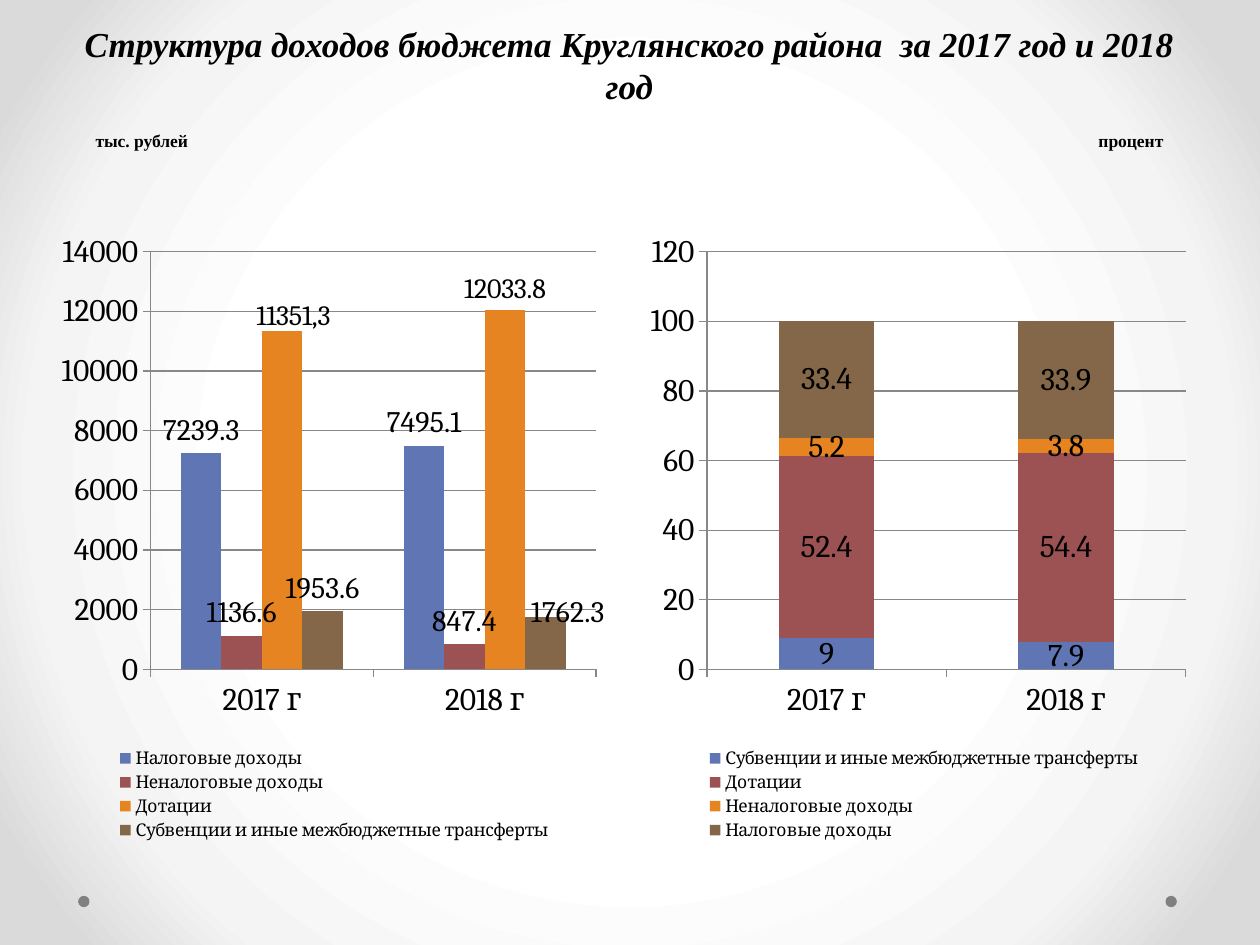
from lxml import etree
from pptx import Presentation
from pptx.chart.data import CategoryChartData
from pptx.dml.color import RGBColor
from pptx.enum.chart import XL_CHART_TYPE as ChartType, XL_LABEL_POSITION as LabelPos
from pptx.enum.chart import XL_LEGEND_POSITION as LegendPos, XL_TICK_MARK as Tick
from pptx.enum.shapes import MSO_SHAPE as Shape
from pptx.enum.text import MSO_ANCHOR as Anchor, PP_ALIGN as Align
from pptx.oxml import parse_xml
from pptx.oxml.ns import nsdecls, qn
from pptx.util import Inches, Pt

COLORS = {"text": "000000", "dot": "808080", "axis": "888888"}
SERIES_COLORS = ["6076B4", "9C5252", "E68422", "846648"]
BACKDROP = [(50, "FFFFFF"), (76, "F4F4F4"), (92, "DADADA")]
YEARS = ["2017 г", "2018 г"]
TAX, NON_TAX = "Налоговые доходы", "Неналоговые доходы"
GRANTS, SUBVENTIONS = "Дотации", "Субвенции и иные межбюджетные трансферты"

CAPTIONS = [
    ("Структура доходов бюджета Круглянского района  за 2017 год и 2018 год",
     (0.43, 0.13, 9.13, 0.77), 20, True, Align.CENTER),
    ("тыс. рублей", (0.59, 0.98, 1.07, 0.27), 10, False, Align.CENTER),
    ("процент", (8.62, 0.98, 0.94, 0.27), 10, False, Align.LEFT),
]
CHARTS = [
    {"kind": ChartType.COLUMN_STACKED, "left": 5.08, "plot": (0.12, 0.05, 0.86, 0.67),
     "max": 120, "step": 20, "overlap": 100, "label_pos": LabelPos.CENTER,
     "series": [(SUBVENTIONS, (9, 7.9), 18), (GRANTS, (52.4, 54.4), 18),
                (NON_TAX, (5.2, 3.8), 18), (TAX, (33.4, 33.9), 18)],
     "moved": []},
    {"kind": ChartType.COLUMN_CLUSTERED, "left": 0.4, "plot": (0.18, 0.05, 0.8, 0.67),
     "max": 14000, "step": 2000, "overlap": 0, "label_pos": LabelPos.OUTSIDE_END,
     "series": [(TAX, (7239.3, 7495.1), 17), (NON_TAX, (1136.6, 847.4), 17),
                (GRANTS, (11351.3, 12033.8), 16), (SUBVENTIONS, (1953.6, 1762.3), 17)],
     "moved": [(2, 0, "11351,3", (0.02, 0.01)), (3, 1, None, (0.04, 0.03))]},
]
LEGEND_AREA = (0.11, 0.84, 0.8, 0.16)


def rgb(value):
    return RGBColor.from_string(value)


def style(font, size, name="Cambria"):
    font.size, font.name = Pt(size), name
    font.color.rgb = rgb(COLORS["text"])


def layout(area, inner=False):
    target = '<c:layoutTarget val="inner"/>' if inner else ""
    modes = "" if len(area) == 2 else '<c:xMode val="edge"/><c:yMode val="edge"/>'
    sizes = "".join(f'<c:{key} val="{value}"/>' for key, value in zip("xywh", area))
    return parse_xml(f'<c:layout {nsdecls("c")}><c:manualLayout>{target}{modes}{sizes}'
                     '</c:manualLayout></c:layout>')


def place(parent, area, after=None, inner=False):
    for old in parent.findall(qn("c:layout")):
        parent.remove(old)
    index = 0 if after is None else parent.index(parent.find(qn(after))) + 1
    parent.insert(index, layout(area, inner))


def paint_background(slide):
    fill = slide.background.fill
    fill.gradient()
    grad = slide.element.find(".//" + qn("a:gradFill"))
    for child in list(grad):
        grad.remove(child)
    stops = etree.SubElement(grad, qn("a:gsLst"))
    for position, color in BACKDROP:
        stop = etree.SubElement(stops, qn("a:gs"), pos=str(position * 1000))
        etree.SubElement(stop, qn("a:srgbClr"), val=color)
    circle = etree.SubElement(grad, qn("a:path"), path="circle")
    etree.SubElement(circle, qn("a:fillToRect"), l="50000", t="50000", r="50000", b="50000")


def add_caption(slide, text, box, size, italic, align):
    frame = slide.shapes.add_textbox(*map(Inches, box)).text_frame
    frame.word_wrap = True
    frame.vertical_anchor = Anchor.MIDDLE
    frame.text = text
    paragraph = frame.paragraphs[0]
    paragraph.alignment = align
    font = paragraph.runs[0].font
    style(font, size, "Times New Roman")
    font.bold, font.italic = True, italic


def add_income_chart(slide, income):
    data = CategoryChartData()
    data.categories = YEARS
    for name, values, _ in income["series"]:
        data.add_series(name, values)
    box = map(Inches, (income["left"], 1.75, 4.42, 4.95))
    chart = slide.shapes.add_chart(income["kind"], *box, data).chart
    style(chart.font, 18)
    chart.has_title = False

    scale = chart.value_axis
    scale.minimum_scale, scale.maximum_scale = 0, income["max"]
    scale.major_unit = income["step"]
    scale.has_major_gridlines = True
    scale.major_gridlines.format.line.color.rgb = rgb(COLORS["axis"])
    scale.tick_labels.number_format = "General"
    scale.tick_labels.number_format_is_linked = False
    for axis in (scale, chart.category_axis):
        axis.major_tick_mark = Tick.OUTSIDE
        axis.format.line.color.rgb = rgb(COLORS["axis"])

    plot = chart.plots[0]
    plot.gap_width, plot.overlap = 150, income["overlap"]
    plot.vary_by_categories = False
    for series, color, (_, _, size) in zip(plot.series, SERIES_COLORS, income["series"]):
        series.format.fill.solid()
        series.format.fill.fore_color.rgb = rgb(color)
        labels = series.data_labels
        labels.show_value = True
        labels.position = income["label_pos"]
        style(labels.font, size)

    for row, column, text, offset in income["moved"]:
        series = plot.series[row]
        label = series.points[column].data_label
        size = income["series"][row][2]
        if text:
            label.text_frame.text = text
            style(label.text_frame.paragraphs[0].runs[0].font, size)
        else:
            style(label.font, size)
        label.position = income["label_pos"]
        place(series.data_labels._element.find(qn("c:dLbl")), offset, "c:idx")

    chart.has_legend = True
    legend = chart.legend
    legend.position = LegendPos.BOTTOM
    legend.include_in_layout = False
    style(legend.font, 10)
    place(legend._element, LEGEND_AREA, "c:legendPos")
    place(chart._chartSpace.find(".//" + qn("c:plotArea")), income["plot"], inner=True)


prs = Presentation()
prs.slide_width, prs.slide_height = Inches(10), Inches(7.5)
slide = prs.slides.add_slide(prs.slide_layouts[6])
paint_background(slide)
for left in (9.25, 0.62):
    dot = slide.shapes.add_shape(Shape.OVAL, *map(Inches, (left, 7.11, 0.09, 0.09)))
    dot.shadow.inherit = False
    dot.fill.solid()
    dot.fill.fore_color.rgb = rgb(COLORS["dot"])
    dot.line.fill.background()
for caption in CAPTIONS:
    add_caption(slide, *caption)
for income in CHARTS:
    add_income_chart(slide, income)
prs.save("out.pptx")
